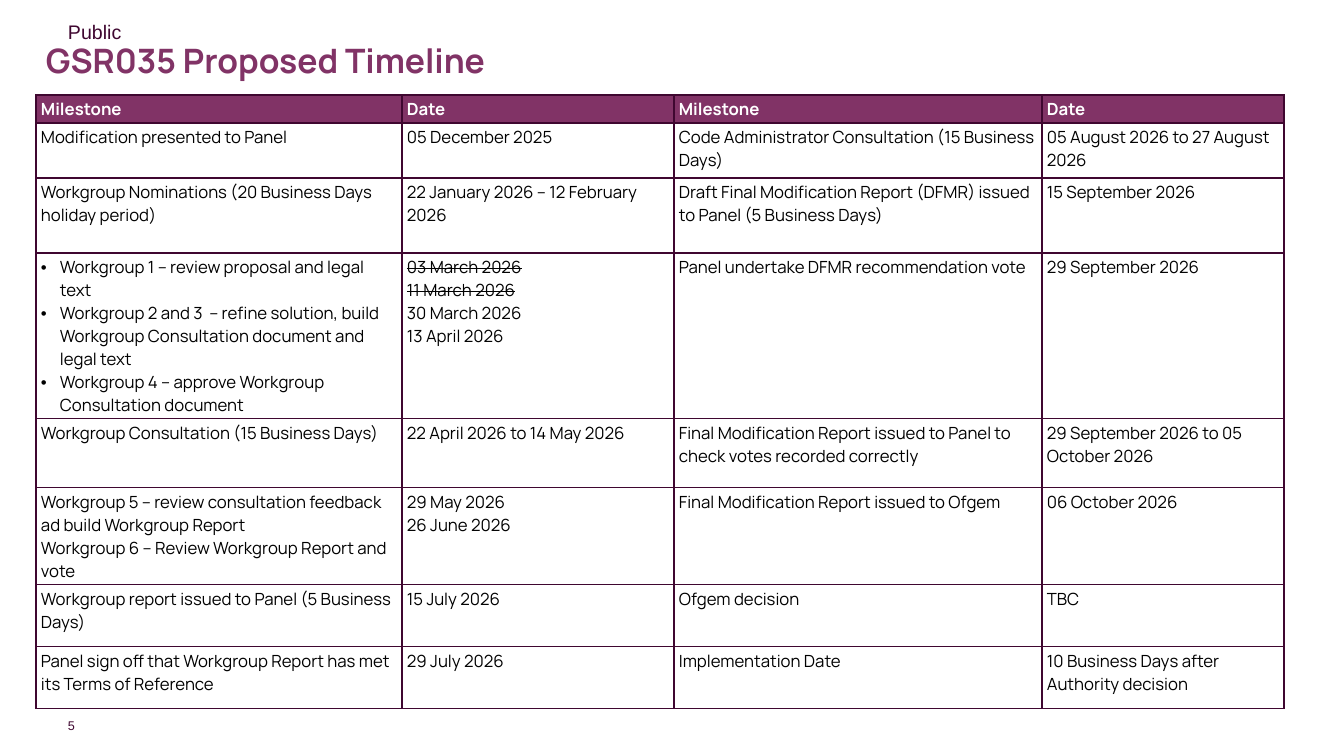
from lxml import etree
from pptx import Presentation
from pptx.dml.color import RGBColor
from pptx.enum.text import MSO_ANCHOR, PP_ALIGN
from pptx.oxml.ns import qn
from pptx.util import Emu, Pt

MIDDLE, TOP = MSO_ANCHOR.MIDDLE, MSO_ANCHOR.TOP
LEFT, RIGHT = PP_ALIGN.LEFT, PP_ALIGN.RIGHT
SCALE = 914400 / 100.8
PLUM, DARK, BLACK, WHITE = "813366", "3F0730", "000000", "FFFFFF"
HEAD, BODY = "Manrope", "Arial"

COLS = [366, 272, 368, 242]
HEIGHTS = [28, 55, 75, 166, 69, 97, 62, 62]
BULLETS = (3, 0)
STRUCK = {"03 March 2026", "11 March 2026"}
ROWS = [
    ["Milestone", "Date", "Milestone", "Date"],
    ["Modification presented to Panel", "05 December 2025",
     "Code Administrator Consultation (15 Business Days)",
     "05 August 2026 to 27 August 2026"],
    ["Workgroup Nominations (20 Business Days holiday period)",
     "22 January 2026 – 12 February 2026",
     "Draft Final Modification Report (DFMR) issued to Panel (5 Business Days)",
     "15 September 2026"],
    ["Workgroup 1 – review proposal and legal text\n"
     "Workgroup 2 and 3  – refine solution, build Workgroup Consultation "
     "document and legal text\n"
     "Workgroup 4 – approve Workgroup Consultation document",
     "03 March 2026\n11 March 2026\n30 March 2026\n13 April 2026",
     "Panel undertake DFMR recommendation vote", "29 September 2026"],
    ["Workgroup Consultation (15 Business Days)", "22 April 2026 to 14 May 2026",
     "Final Modification Report issued to Panel to check votes recorded correctly",
     "29 September 2026 to 05 October 2026"],
    ["Workgroup 5 – review consultation feedback ad build Workgroup Report\n"
     "Workgroup 6 – Review Workgroup Report and vote",
     "29 May 2026\n26 June 2026",
     "Final Modification Report issued to Ofgem", "06 October 2026"],
    ["Workgroup report issued to Panel (5 Business Days)", "15 July 2026",
     "Ofgem decision", "TBC"],
    ["Panel sign off that Workgroup Report has met its Terms of Reference",
     "29 July 2026", "Implementation Date",
     "10 Business Days after Authority decision"],
]


def px(n):
    return Emu(round(n * SCALE))


def color(code):
    return RGBColor.from_string(code)


def style(run, size, face, code, bold=False):
    font = run.font
    font.size, font.name, font.bold = Pt(size), face, bold
    font.color.rgb = color(code)


def label(slide, box, text, size, face, code, bold=False,
          anchor=TOP, align=LEFT, pad=(10, 5), wrap=True):
    frame = slide.shapes.add_textbox(*map(px, box)).text_frame
    frame.word_wrap = wrap
    frame.vertical_anchor = anchor
    frame.margin_left = frame.margin_right = px(pad[0])
    frame.margin_top = frame.margin_bottom = px(pad[1])
    frame.text = text
    para = frame.paragraphs[0]
    para.alignment = align
    style(para.runs[0], size, face, code, bold)
    return para


def border(cell):
    props = cell._tc.get_or_add_tcPr()
    for side in ("lnL", "lnR", "lnT", "lnB"):
        line = etree.SubElement(props, qn(f"a:{side}"), w=str(Pt(1)))
        fill = etree.SubElement(line, qn("a:solidFill"))
        etree.SubElement(fill, qn("a:srgbClr"), val=DARK)


def bullet(para):
    props = para._p.get_or_add_pPr()
    props.set("marL", str(px(19)))
    props.set("indent", str(-px(19)))
    etree.SubElement(props, qn("a:buFont"), typeface=BODY)
    etree.SubElement(props, qn("a:buChar"), char="•")


def fill_cell(cell, text, head, listed):
    cell.margin_left = cell.margin_right = px(5)
    cell.margin_top, cell.margin_bottom = px(3), px(2)
    border(cell)
    if head:
        cell.fill.solid()
        cell.fill.fore_color.rgb = color(PLUM)
    else:
        cell.fill.background()
    cell.text_frame.text = text
    for para in cell.text_frame.paragraphs:
        if listed:
            bullet(para)
        run = para.runs[0]
        style(run, 12, HEAD, WHITE if head else BLACK, head)
        if run.text in STRUCK:
            run._r.get_or_add_rPr().set("strike", "sngStrike")


def timeline(slide, left, top):
    box = (left, top, sum(COLS), sum(HEIGHTS))
    table = slide.shapes.add_table(len(ROWS), len(COLS), *map(px, box)).table
    table.horz_banding = False
    for col, width in zip(table.columns, COLS):
        col.width = px(width)
    for r, (row, texts) in enumerate(zip(table.rows, ROWS)):
        row.height = px(HEIGHTS[r])
        for c, text in enumerate(texts):
            fill_cell(table.cell(r, c), text, r == 0, (r, c) == BULLETS)


def header(slide, left, top):
    label(slide, (left + 22, top, 504, 34), "Public", 14, BODY, DARK)
    title = label(slide, (left, top, 1070, 96), "GSR035 Proposed Timeline",
                  24, HEAD, PLUM, bold=True, anchor=MIDDLE)
    title.line_spacing = 0.9


def footer(slide, left, top):
    label(slide, (left, top, 15, 15), "5", 9, BODY, DARK,
          anchor=MIDDLE, align=RIGHT, pad=(0, 0), wrap=False)


def main():
    deck = Presentation()
    deck.slide_width, deck.slide_height = px(1344), px(756)
    slide = deck.slides.add_slide(deck.slide_layouts[6])
    footer(slide, 60, 718)
    header(slide, 36, 15)
    timeline(slide, 36, 95)
    deck.save("out.pptx")


if __name__ == "__main__":
    main()
